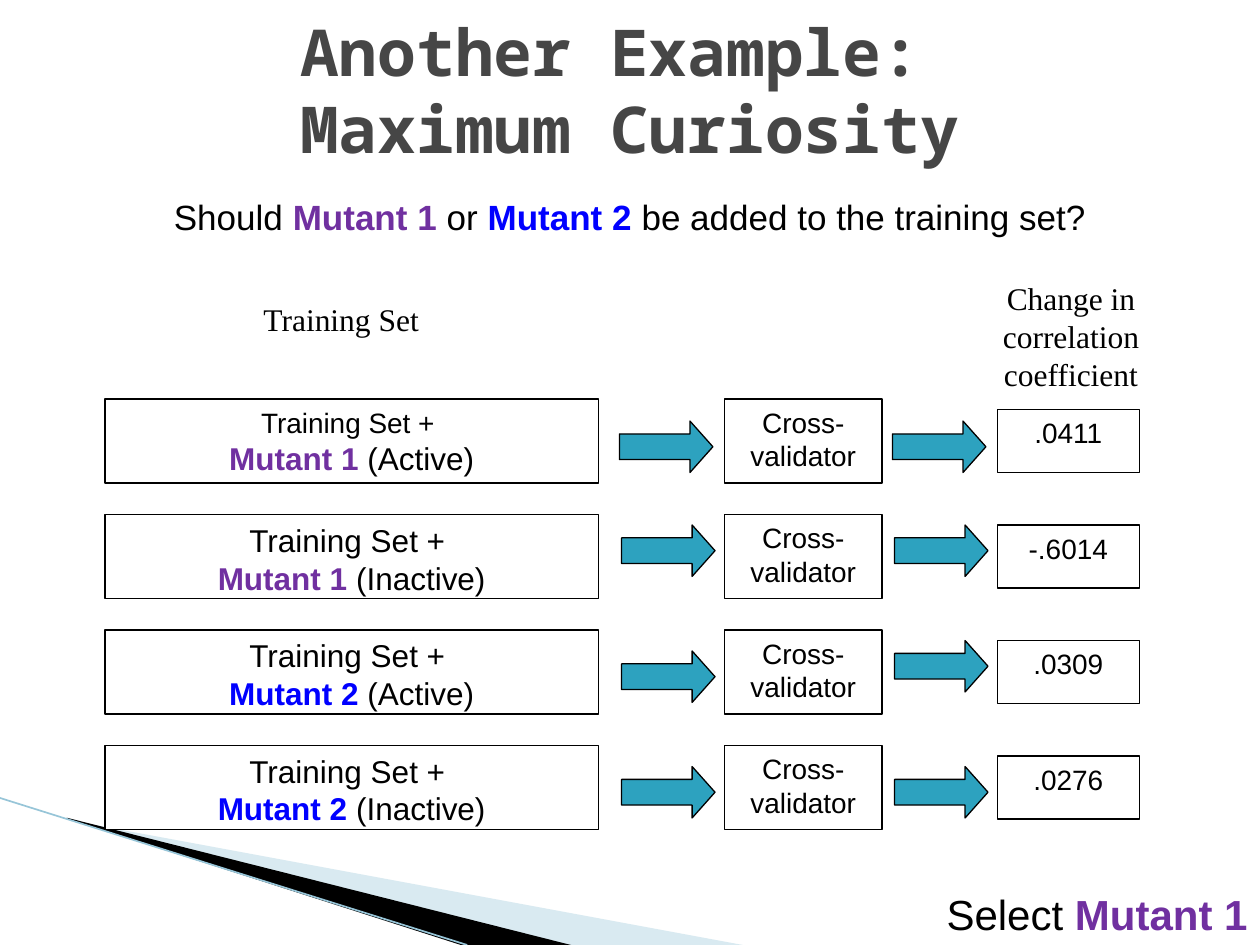
from lxml import etree
from pptx import Presentation
from pptx.dml.color import RGBColor
from pptx.enum.shapes import MSO_CONNECTOR as CONN, MSO_SHAPE as SHAPE
from pptx.enum.text import MSO_ANCHOR as ANCHOR, PP_ALIGN as ALIGN
from pptx.oxml.ns import qn
from pptx.util import Emu, Inches, Pt

BLACK = RGBColor(0, 0, 0)
WHITE = RGBColor(255, 255, 255)
GREY = RGBColor(0x46, 0x46, 0x46)
PURPLE = RGBColor(0x70, 0x30, 0xA0)
BLUE = RGBColor(0, 0, 255)
TEAL = RGBColor(0x2D, 0xA2, 0xBF)
PALE = RGBColor(0xA0, 0xCB, 0xDC)
EDGE = RGBColor(0x97, 0xC5, 0xD8)

UNIT = Inches(10) / 120
BODY = {"name": "Arial", "size": Pt(16), "bold": False, "color": BLACK}
LARGE = BODY | {"size": Pt(18)}
ASK = BODY | {"size": Pt(20)}
PICK = BODY | {"size": Pt(24)}
HEADING = LARGE | {"name": "Times New Roman"}
TITLE = {"name": "Noto Sans Mono", "size": Pt(36.9), "bold": True, "color": GREY}
ROW_TOP, ROW_STEP = 38, 11
ROWS = [
    ("Mutant 1 ", PURPLE, "(Active)", ".0411", BODY, (59, 40.1), (85, 40.1)),
    ("Mutant 1 ", PURPLE, "(Inactive)", "-.6014", LARGE, (59.2, 50), (85.2, 50)),
    ("Mutant 2 ", BLUE, "(Active)", ".0309", LARGE, (59.2, 62), (85.2, 61)),
    ("Mutant 2 ", BLUE, "(Inactive)", ".0276", LARGE, (59.2, 73), (85.2, 73)),
]


def grid(*cells):
    """Turn grid columns and rows into lengths."""
    return [Emu(round(c * UNIT)) for c in cells]


def strong(fmt, color):
    """Return a bold variant of a format in the given colour."""
    return fmt | {"bold": True, "color": color}


def write(tf, lines, align=ALIGN.CENTER):
    """Write lines of (text, format) runs into one paragraph."""
    tf.word_wrap = True
    p = tf.paragraphs[0]
    p.alignment = align
    for i, line in enumerate(lines):
        if i:
            p.add_line_break()
        for text, fmt in line:
            r = p.add_run()
            r.text = text
            for key, value in fmt.items():
                if key == "color":
                    r.font.color.rgb = value
                else:
                    setattr(r.font, key, value)


def add_label(s, box, lines, align=ALIGN.CENTER, anchor=ANCHOR.TOP, inset=1.2):
    """Place a text box on the grid."""
    tf = s.shapes.add_textbox(*grid(*box)).text_frame
    tf.vertical_anchor = anchor
    tf.margin_left = tf.margin_right = grid(inset)[0]
    write(tf, lines, align)


def add_block(s, kind, box, fill):
    """Place an outlined preset shape on the grid."""
    sp = s.shapes.add_shape(kind, *grid(*box))
    sp.shadow.inherit = False
    sp.fill.solid()
    sp.fill.fore_color.rgb = fill
    sp.line.color.rgb = BLACK
    sp.line.width = Pt(0.75)
    return sp


def add_box(s, box, lines):
    """Place a white rectangle with text."""
    tf = add_block(s, SHAPE.RECTANGLE, box, WHITE).text_frame
    tf.vertical_anchor = ANCHOR.TOP
    write(tf, lines)


def add_arrow(s, left, top):
    """Place a teal block arrow at a grid point."""
    sp = add_block(s, SHAPE.RIGHT_ARROW, (left, top, 8.9, 4.9), TEAL)
    sp.adjustments[0], sp.adjustments[1] = 0.5, 0.445


def add_row(s, top, mutant, color, state, value, lead, first, second):
    """Build one training set, validator and result row."""
    add_box(s, (10, top, 47, 8), [
        [("Training Set + ", lead)],
        [(mutant, strong(LARGE, color)), (state, LARGE)],
    ])
    add_box(s, (69, top, 15, 8), [[("Cross-validator", BODY)]])
    add_box(s, (95, top + 1, 13.5, 6), [[(value, BODY)]])
    for spot in (first, second):
        add_arrow(s, *spot)


def add_wedge(s, points, fill, alpha=None):
    """Draw a filled outline from points in hundredths of an inch."""
    fb = s.shapes.build_freeform(*points[0], scale=Inches(0.01))
    fb.add_line_segments(points[1:], close=True)
    sp = fb.convert_to_shape()
    sp.shadow.inherit = False
    sp.fill.solid()
    sp.fill.fore_color.rgb = fill
    sp.line.fill.background()
    if alpha:
        clr = sp.fill._xPr.find(".//" + qn("a:srgbClr"))
        etree.SubElement(clr, qn("a:alpha"), val=str(alpha * 1000))


def add_corner(s):
    """Draw the decoration in the lower left corner."""
    add_wedge(s, [(55, 651), (595, 751), (456, 751), (55, 650)], PALE, 40)
    add_wedge(s, [(53, 649), (457, 751), (372, 752), (54, 650)], BLACK)
    line = s.shapes.add_connector(CONN.STRAIGHT, *grid(0, 76, 44.5, 90))
    line.line.color.rgb = EDGE
    line.line.width = Pt(0.95)
    etree.SubElement(line._element.spPr, qn("a:effectLst"))


def add_headings(s):
    """Write the title, the question and the column headings."""
    add_label(s, (0, 1, 120, 15),
              [[("Another Example: ", TITLE)], [("Maximum Curiosity", TITLE)]],
              anchor=ANCHOR.MIDDLE)
    add_label(s, (0, 18, 120, 5.3), [[
        ("Should ", ASK), ("Mutant 1 ", strong(ASK, PURPLE)), ("or ", ASK),
        ("Mutant 2 ", strong(ASK, BLUE)), ("be added to the training set?", ASK),
    ]])
    add_label(s, (23, 28, 19, 4.8), [[("Training Set", HEADING)]])
    add_label(s, (88, 26, 28, 8.4),
              [[("Change in correlation coefficient", HEADING)]], inset=3)


def main():
    """Build and save the slide."""
    prs = Presentation()
    prs.slide_width, prs.slide_height = Inches(10), Inches(7.5)
    s = prs.slides.add_slide(prs.slide_layouts[6])
    add_corner(s)
    add_headings(s)
    for i, row in enumerate(ROWS):
        add_row(s, ROW_TOP + i * ROW_STEP, *row)
    add_label(s, (48, 84, 72, 6),
              [[("Select ", PICK), ("Mutant 1", strong(PICK, PURPLE))]], ALIGN.RIGHT)
    prs.save("out.pptx")


if __name__ == "__main__":
    main()
